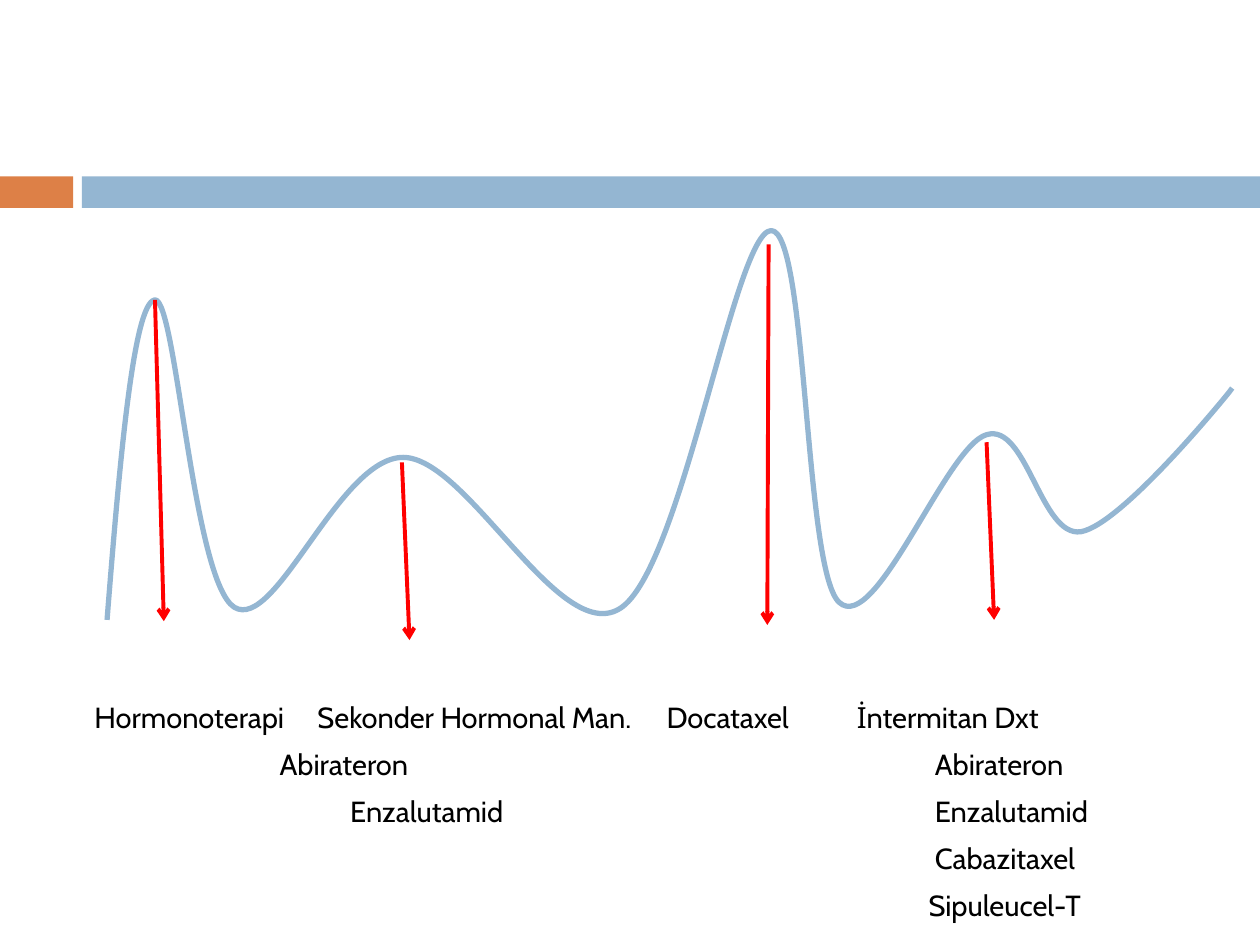
from lxml import etree
from pptx import Presentation
from pptx.dml.color import RGBColor
from pptx.enum.shapes import MSO_CONNECTOR, MSO_SHAPE
from pptx.oxml.ns import qn
from pptx.util import Inches, Pt

BLUE, ORANGE, RED, BLACK = "94B6D2", "DD8047", "FF0000", "000000"


def color(hex_string):
    return RGBColor.from_string(hex_string)


prs = Presentation()
prs.slide_width, prs.slide_height = Inches(10), Inches(7.5)
slide = prs.slides.add_slide(prs.slide_layouts[6])
shapes = slide.shapes

# Header band
for left, width, fill in [(0, 0.58, ORANGE), (0.65, 9.35, BLUE)]:
    band = shapes.add_shape(MSO_SHAPE.RECTANGLE, Inches(left), Inches(1.4),
                            Inches(width), Inches(0.25))
    band.shadow.inherit = False
    band.fill.solid()
    band.fill.fore_color.rgb = color(fill)
    band.line.fill.background()

# Treatment names: each row is a list of (left edge, name)
text_left = 0.75
treatment_rows = [
    [(0.75, "Hormonoterapi"), (2.52, "Sekonder Hormonal Man."),
     (5.29, "Docataxel"), (6.8, "İntermitan Dxt")],
    [(2.22, "Abirateron"), (7.42, "Abirateron")],
    [(2.78, "Enzalutamid"), (7.42, "Enzalutamid")],
    [(7.42, "Cabazitaxel")],
    [(7.37, "Sipuleucel-T")],
]
treatments = shapes.add_textbox(Inches(text_left), Inches(5.55), Inches(8.84), Inches(1.9))
frame = treatments.text_frame
frame.word_wrap = True
frame.margin_left = frame.margin_right = frame.margin_top = frame.margin_bottom = 0
for index, row in enumerate(treatment_rows):
    paragraph = frame.add_paragraph() if index else frame.paragraphs[0]
    paragraph.space_after = Pt(7)
    tab_list = etree.SubElement(paragraph._p.get_or_add_pPr(), qn("a:tabLst"))
    content = ""
    for left, name in row:
        if left > text_left:
            etree.SubElement(tab_list, qn("a:tab"),
                             pos=str(Inches(left - text_left)), algn="l")
            content += "\t"
        content += name
    run = paragraph.add_run()
    run.text = content
    run.font.name = "Cabin"
    run.font.size = Pt(16.6)
    run.font.color.rgb = color(BLACK)

# Disease curve: a start point, then two handles and an end point per segment
curve_start = (0.85, 4.92)
curve_points = [
    (0.95, 3.66), (1.06, 2.4), (1.23, 2.38),
    (1.4, 2.37), (1.53, 4.61), (1.86, 4.82),
    (2.19, 5.02), (2.69, 3.63), (3.2, 3.63),
    (3.71, 3.63), (4.44, 5.13), (4.92, 4.83),
    (5.41, 4.53), (5.83, 1.84), (6.12, 1.83),
    (6.41, 1.82), (6.38, 4.52), (6.66, 4.78),
    (6.95, 5.05), (7.51, 3.54), (7.83, 3.45),
    (8.15, 3.35), (8.26, 4.27), (8.58, 4.22),
    (8.91, 4.16), (9.75, 3.12), (9.75, 3.12),
    (9.78, 3.08),
]
builder = shapes.build_freeform(Inches(curve_start[0]), Inches(curve_start[1]))
builder.add_line_segments([(Inches(x), Inches(y)) for x, y in curve_points], close=False)
curve = builder.convert_to_shape()
curve.shadow.inherit = False
curve.fill.background()
curve.line.color.rgb = color(BLUE)
curve.line.width = Pt(3)

# Turn every three line points into one Bézier segment; the last line stays straight
lines = list(curve._element.iter(qn("a:lnTo")))
for first in range(0, len(lines) - 1, 3):
    bezier = etree.Element(qn("a:cubicBezTo"))
    lines[first].addprevious(bezier)
    for line in lines[first:first + 3]:
        bezier.append(line[0])
        line.getparent().remove(line)

# Arrows from the peaks down to the treatments
for x1, y1, x2, y2 in [(1.23, 2.38, 1.3, 4.93), (3.19, 3.67, 3.25, 5.08),
                       (6.1, 1.94, 6.09, 4.96), (7.83, 3.51, 7.89, 4.92)]:
    arrow = shapes.add_connector(MSO_CONNECTOR.STRAIGHT, Inches(x1), Inches(y1),
                                 Inches(x2), Inches(y2))
    arrow.line.color.rgb = color(RED)
    arrow.line.width = Pt(2.25)
    etree.SubElement(arrow.line._get_or_add_ln(), qn("a:tailEnd"), type="arrow")
    etree.SubElement(arrow._element.spPr, qn("a:effectLst"))

prs.save("out.pptx")
